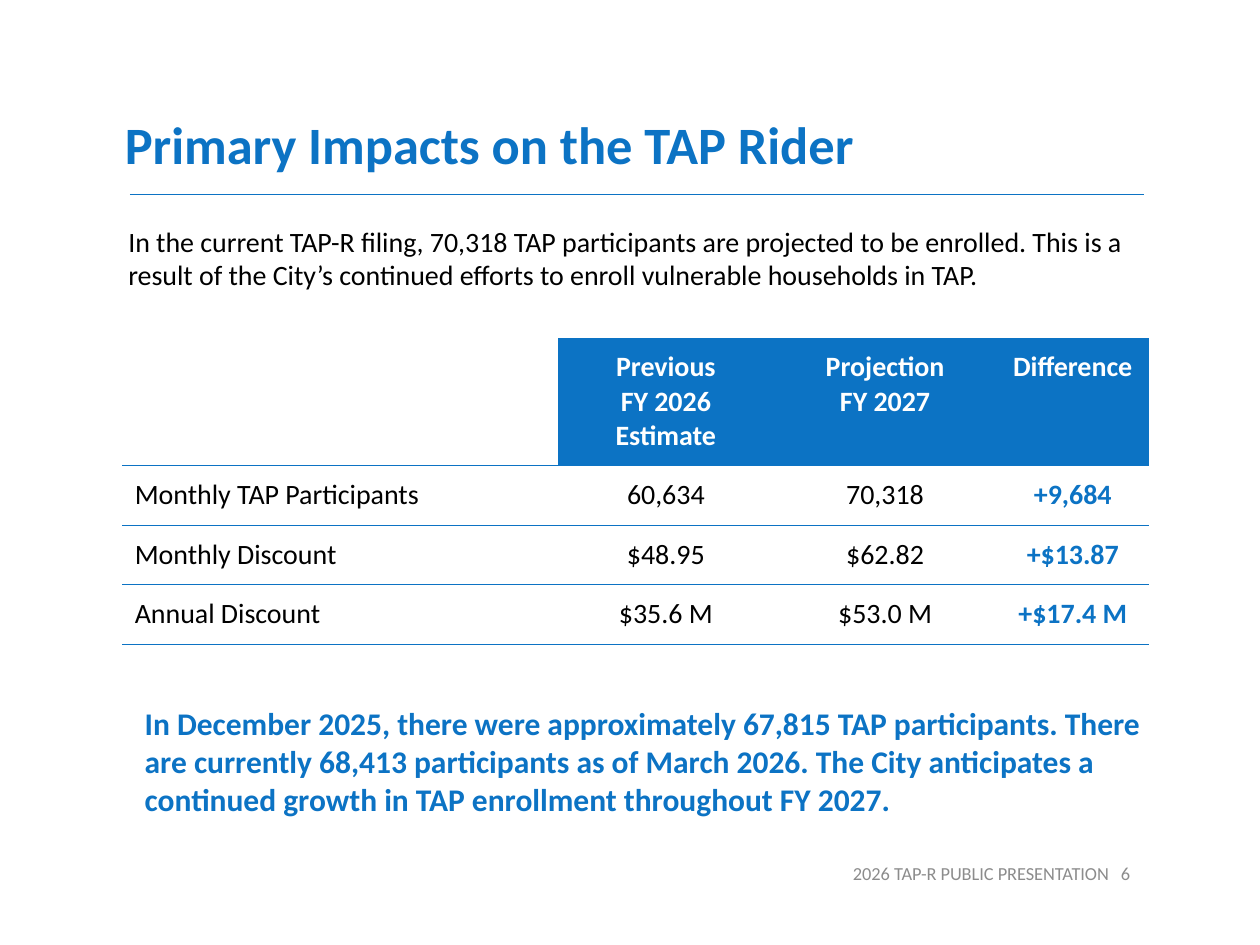
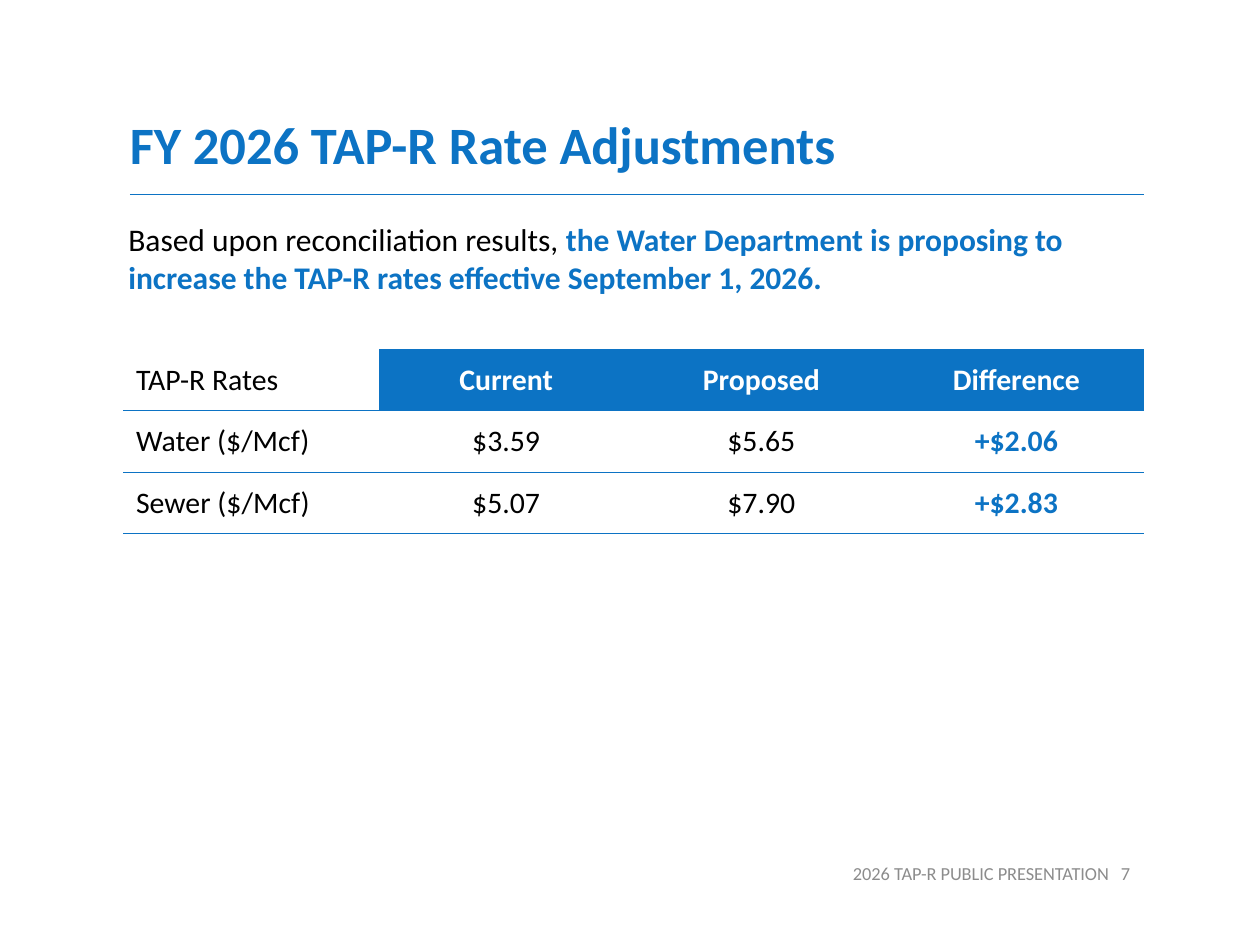
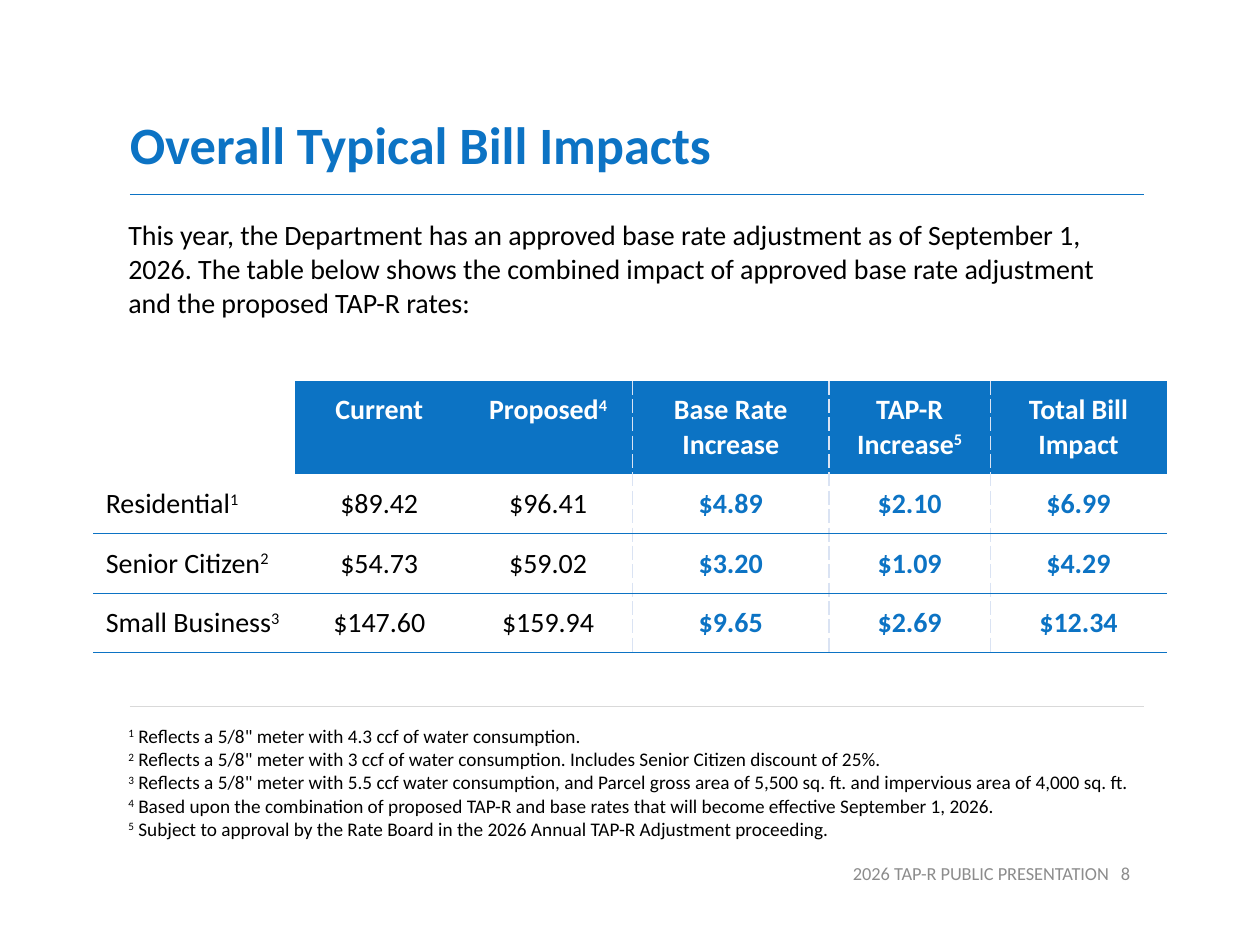
"""Build three slides on the TAP rider: impacts, rate adjustments and typical bills."""
from lxml import etree
from pptx import Presentation
from pptx import util as u
from pptx.dml.color import RGBColor
from pptx.enum import shapes, text
from pptx.oxml import ns

BLUE, BLACK, WHITE = "0C73C4", "000000", "FFFFFF"
GREY, PALE_GREY, PALE_BLUE = "8C8C8C", "D9D9D9", "DAE3F3"
FONT = "Calibri"
NO_STYLE = "{2D5ABB26-0587-4C30-8999-92F81FD0307C}"
RULE_LEFT, RULE_RIGHT, TITLE_RULE_TOP = 1.03, 9.08, 1.54
FIRST_ACCENT_COLUMN = 3
MARGINS = {f"margin_{side}": u.Inches(0.1) for side in ("left", "top", "right", "bottom")}
NO_MARGINS = dict.fromkeys(MARGINS, 0)
FRAME = {"word_wrap": True, "auto_size": text.MSO_AUTO_SIZE.NONE}
CENTER = {"alignment": text.PP_ALIGN.CENTER}


def color(value):
    """Turn a hex string into a colour."""
    return RGBColor.from_string(value)


def apply_format(target, values):
    """Set every attribute named in values on target."""
    for name, value in values.items():
        setattr(target, name, value)


def add_child(parent, tag, **attributes):
    """Append a DrawingML element to parent."""
    return etree.SubElement(parent, ns.qn(tag), attributes)


def add_run(paragraph, content, style, raised=False):
    """Add one run, optionally as superscript."""
    run = paragraph.add_run()
    run.text = content
    values = {"name": FONT, "bold": False, **style}
    run.font.color.rgb = color(values.pop("color"))
    values["size"] = u.Pt(values["size"])
    apply_format(run.font, values)
    if raised:
        run.font._element.set("baseline", "30000")


def add_marked_text(paragraph, content, style):
    """Add text in which a caret raises the next character."""
    plain, *marked = content.split("^")
    if plain:
        add_run(paragraph, plain, style)
    for part in marked:
        add_run(paragraph, part[0], style, raised=True)
        if part[1:]:
            add_run(paragraph, part[1:], style)


def write_lines(frame, content, style, layout=None):
    """Write each line of content as a paragraph."""
    for index, line in enumerate(content.split("\n")):
        paragraph = frame.add_paragraph() if index else frame.paragraphs[0]
        apply_format(paragraph, layout or {})
        add_marked_text(paragraph, line, style)


def add_text(slide, box, content, style):
    """Add a wrapping text box and return its frame."""
    frame = slide.shapes.add_textbox(*map(u.Inches, box)).text_frame
    apply_format(frame, {**FRAME, **MARGINS})
    write_lines(frame, content, style)
    return frame


def add_rule(slide, top, line_color):
    """Draw a thin rule across the content width."""
    ends = map(u.Inches, (RULE_LEFT, top, RULE_RIGHT, top))
    rule = slide.shapes.add_connector(shapes.MSO_CONNECTOR.STRAIGHT, *ends)
    rule.line.color.rgb = color(line_color)
    rule.line.width = u.Pt(0.5)
    add_child(rule._element.spPr, "a:effectLst")


def add_footer(slide, number):
    """Add the footer label with the slide number at a right tab."""
    box = map(u.Inches, (5.84, 6.73, 3.23, 0.4))
    frame = slide.shapes.add_textbox(*box).text_frame
    apply_format(frame, {**FRAME, **MARGINS, "margin_left": u.Inches(0.93),
                         "vertical_anchor": text.MSO_ANCHOR.MIDDLE})
    paragraph = frame.paragraphs[0]
    tabs = add_child(paragraph._p.get_or_add_pPr(), "a:tabLst")
    add_child(tabs, "a:tab", pos=str(u.Inches(2.2)), algn="r")
    add_run(paragraph, f"2026 TAP-R PUBLIC PRESENTATION\t{number}",
            {"size": 10.5, "color": GREY})


def add_titled_slide(presentation, title, number, left=RULE_LEFT):
    """Add a slide with its title, title rule and footer."""
    slide = presentation.slides.add_slide(presentation.slide_layouts[5])
    placeholder = slide.shapes.title
    bounds = zip(("left", "top", "width", "height"), (left, 0.77, 8.4, 0.62))
    apply_format(placeholder, {name: u.Inches(value) for name, value in bounds})
    frame = placeholder.text_frame
    apply_format(frame, {**FRAME, **NO_MARGINS, "vertical_anchor": text.MSO_ANCHOR.BOTTOM})
    write_lines(frame, title, {"size": 30, "color": BLUE, "bold": True},
                {"alignment": text.PP_ALIGN.LEFT, "line_spacing": 0.83})
    add_rule(slide, TITLE_RULE_TOP, BLUE)
    add_footer(slide, number)
    return slide


def add_border(cell, side, line_color, width, dash="solid"):
    """Draw one border of a table cell."""
    line = add_child(cell._tc.get_or_add_tcPr(), f"a:ln{side}", w=str(u.Pt(width)))
    add_child(add_child(line, "a:solidFill"), "a:srgbClr", val=line_color)
    add_child(line, "a:prstDash", val=dash)


def format_cell(cell, content, row, column, size):
    """Fill in a cell styled as a label, header, value or accent."""
    apply_format(cell, MARGINS)
    is_header = row == 0 and column > 0
    is_accent = column >= FIRST_ACCENT_COLUMN
    text_color = WHITE if is_header else BLUE if is_accent else BLACK
    style = {"size": size, "color": text_color, "bold": is_header or is_accent}
    write_lines(cell.text_frame, content, style, CENTER if column else None)
    if is_header:
        cell.fill.solid()
        cell.fill.fore_color.rgb = color(BLUE)
    else:
        cell.fill.background()


def add_rate_table(slide, left, top, widths, heights, rows, size=16,
                   header_line=True, dashed=()):
    """Add a table with row rules and dashed lines left of some columns."""
    box = map(u.Inches, (left, top, sum(widths), sum(heights)))
    table = slide.shapes.add_table(len(rows), len(widths), *box).table
    table._tbl.tblPr.find(ns.qn("a:tableStyleId")).text = NO_STYLE
    for column, width in zip(table.columns, widths):
        column.width = u.Inches(width)
    for row_index, (height, values) in enumerate(zip(heights, rows)):
        table.rows[row_index].height = u.Inches(height)
        for column_index, content in enumerate(values):
            cell = table.cell(row_index, column_index)
            for side, edge in (("L", column_index), ("R", column_index + 1)):
                if edge in dashed:
                    add_border(cell, side, PALE_BLUE, 1, "dash")
            if row_index > 1 or (row_index == 1 and header_line):
                add_border(cell, "T", BLUE, 0.5)
            if row_index or header_line:
                add_border(cell, "B", BLUE, 0.5)
            format_cell(cell, content, row_index, column_index, size)


def build_impacts(presentation):
    """Build the slide on primary impacts."""
    slide = add_titled_slide(presentation, "Primary Impacts on the TAP Rider", 6, 0.99)
    add_text(slide, (0.92, 1.68, 8.24, 0.8),
             "In the current TAP-R filing, 70,318 TAP participants are projected to be "
             "enrolled. This is a result of the City’s continued efforts to enroll "
             "vulnerable households in TAP.", {"size": 16, "color": BLACK})
    add_rate_table(slide, 0.97, 2.68, [3.46, 1.71, 1.77, 1.21], [1.01] + [0.47] * 3, [
        ["", "Previous\nFY 2026\nEstimate", "Projection\nFY 2027", "Difference"],
        ["Monthly TAP Participants", "60,634", "70,318", "+9,684"],
        ["Monthly Discount", "$48.95", "$62.82", "+$13.87"],
        ["Annual Discount", "$35.6 M", "$53.0 M", "+$17.4 M"]])
    add_text(slide, (1.05, 5.49, 8.11, 1.15),
             "In December 2025, there were approximately 67,815 TAP participants. There "
             "are currently 68,413 participants as of March 2026. The City anticipates a "
             "continued growth in TAP enrollment throughout FY 2027.",
             {"size": 18, "color": BLUE, "bold": True})


def build_rates(presentation):
    """Build the slide on rate adjustments."""
    slide = add_titled_slide(presentation, "FY 2026 TAP-R Rate Adjustments", 7)
    intro = add_text(slide, (0.92, 1.65, 8.15, 0.8),
                     "Based upon reconciliation results, ", {"size": 18, "color": BLACK})
    add_run(intro.paragraphs[0], "the Water Department is proposing to increase the "
            "TAP-R rates effective September 1, 2026.",
            {"size": 18, "color": BLUE, "bold": True})
    add_rate_table(slide, 0.98, 2.77, [8.1 / 4] * 4, [0.48] * 3, [
        ["TAP-R Rates", "Current", "Proposed", "Difference"],
        ["Water ($/Mcf)", "$3.59", "$5.65", "+$2.06"],
        ["Sewer ($/Mcf)", "$5.07", "$7.90", "+$2.83"]], size=17)


def build_bills(presentation):
    """Build the slide on typical bills with its footnotes."""
    slide = add_titled_slide(presentation, "Overall Typical Bill Impacts", 8)
    add_text(slide, (0.92, 1.63, 8.15, 1.09),
             "This year, the Department has an approved base rate adjustment as of "
             "September 1, 2026. The table below shows the combined impact of approved "
             "base rate adjustment and the proposed TAP-R rates:",
             {"size": 16, "color": BLACK})
    add_rate_table(slide, 0.74, 3.02, [1.6, 1.34, 1.34, 1.56, 1.28, 1.4],
                   [0.74] + [0.47] * 3, [
        ["", "Current", "Proposed^4", "Base Rate Increase", "TAP-R\nIncrease^5",
         "Total Bill\nImpact"],
        ["Residential^1", "$89.42", "$96.41", "$4.89", "$2.10", "$6.99"],
        ["Senior Citizen^2", "$54.73", "$59.02", "$3.20", "$1.09", "$4.29"],
        ["Small Business^3", "$147.60", "$159.94", "$9.65", "$2.69", "$12.34"]],
        header_line=False, dashed=(3, 4, 5))
    add_rule(slide, 5.61, PALE_GREY)
    footnotes = [
        'Reflects a 5/8" meter with 4.3 ccf of water consumption.',
        'Reflects a 5/8" meter with 3 ccf of water consumption. Includes Senior Citizen '
        "discount of 25%.",
        'Reflects a 5/8" meter with 5.5 ccf water consumption, and Parcel gross area of '
        "5,500 sq. ft. and impervious area of 4,000 sq. ft.",
        "Based upon the combination of proposed TAP-R and base rates that will become "
        "effective September 1, 2026.",
        "Subject to approval by the Rate Board in the 2026 Annual TAP-R Adjustment "
        "proceeding."]
    lines = [f"^{number} {note}" for number, note in enumerate(footnotes, 1)]
    add_text(slide, (0.92, 5.65, 8.84, 1.13), "\n".join(lines),
             {"size": 11, "color": BLACK})


def main():
    """Create the presentation and save it."""
    presentation = Presentation()
    apply_format(presentation, {"slide_width": u.Inches(10), "slide_height": u.Inches(7.5)})
    for build in (build_impacts, build_rates, build_bills):
        build(presentation)
    presentation.save("out.pptx")


if __name__ == "__main__":
    main()
